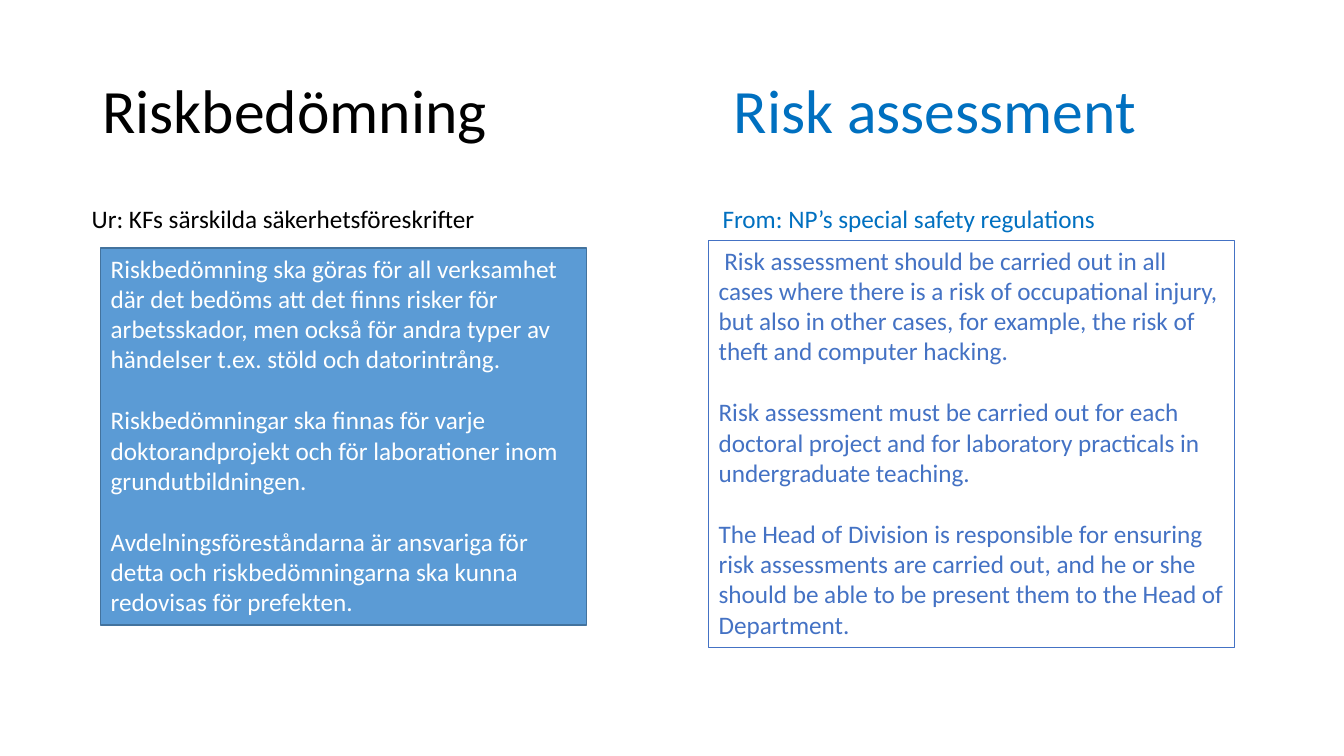
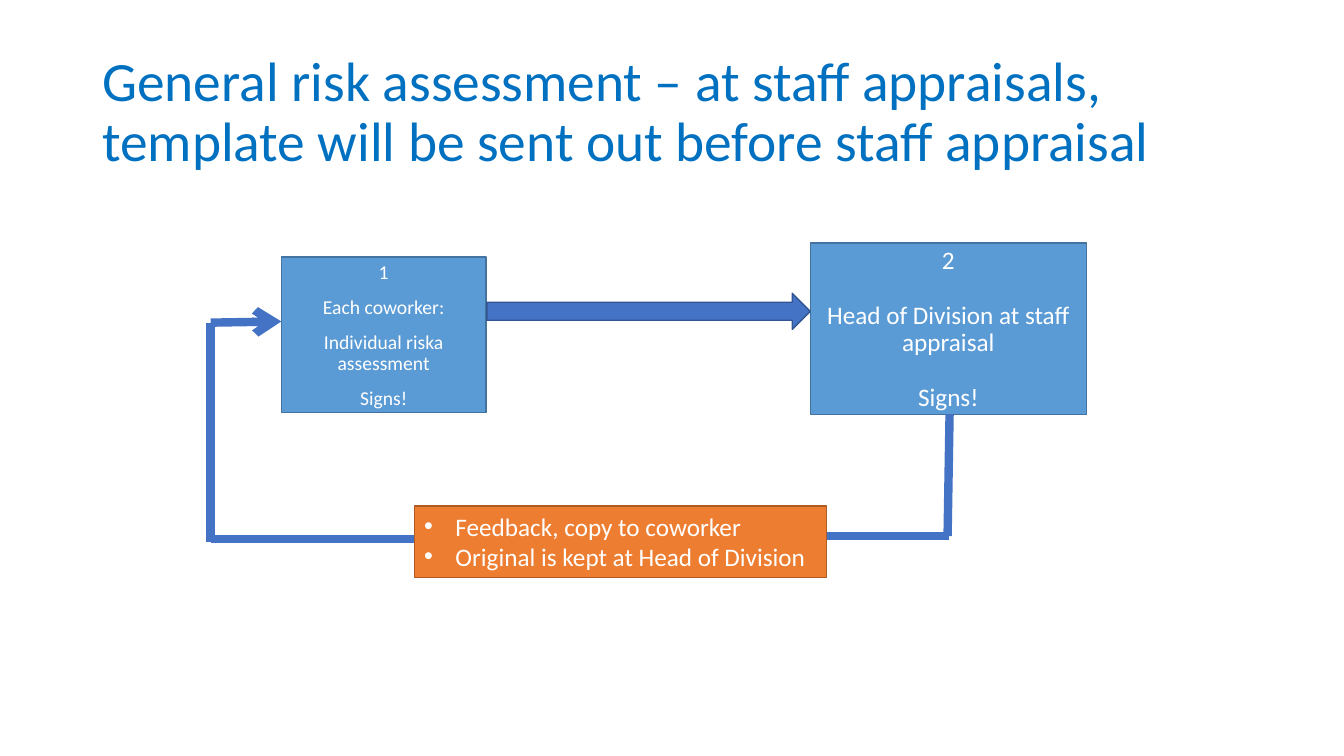
from lxml import etree
from pptx import Presentation
from pptx.dml.color import RGBColor
from pptx.enum.shapes import MSO_CONNECTOR as CONN, MSO_SHAPE as SHAPE
from pptx.enum.text import MSO_ANCHOR as ANCHOR, PP_ALIGN as ALIGN
from pptx.oxml.ns import qn
from pptx.util import Cm, Pt

FONT = "Calibri"
BLACK, WHITE = "000000", "FFFFFF"
TITLE_BLUE, LINE_BLUE, BOX_BLUE, BOX_EDGE = "0070C0", "4472C4", "5B9BD5", "43739E"
ARROW_EDGE, ORANGE, ORANGE_EDGE = "325491", "ED7D31", "AF5C24"
BODY = 18
BLANK_LINE = 22  # points: one line of body text
TITLE_TOP, TITLE_H = 1.02, 3.68
SOURCE_TOP, SOURCE_H = 5.0, 1.02

# Content: one column per language, positions in cm
COLUMNS = [
    dict(
        title="Riskbedömning", title_x=2.33, title_w=29.21, color=BLACK,
        source="Ur: KFs särskilda säkerhetsföreskrifter", source_x=2.06, source_w=10.26,
        box=(2.54, 6.25, 12.24, 9.5),
        box_style=dict(fill=BOX_BLUE, line=BOX_EDGE), text_color=WHITE,
        body=[
            "Riskbedömning ska göras för all verksamhet där det bedöms att det finns "
            "risker för arbetsskador, men också för andra typer av händelser t.ex. "
            "stöld och datorintrång.",
            "Riskbedömningar ska finnas för varje doktorandprojekt och för "
            "laborationer inom grundutbildningen.",
            "Avdelningsföreståndarna är ansvariga för detta och riskbedömningarna "
            "ska kunna redovisas för prefekten.",
        ],
    ),
    dict(
        title="Risk assessment", title_x=18.24, title_w=10.77, color=TITLE_BLUE,
        source="From: NP’s special safety regulations", source_x=17.96, source_w=10.01,
        box=(17.86, 6.05, 13.26, 10.26),
        box_style=dict(line=LINE_BLUE, width=0.5), text_color=LINE_BLUE,
        body=[
            " Risk assessment should be carried out in all cases where there is a "
            "risk of occupational injury, but also in other cases, for example, the "
            "risk of theft and computer hacking.",
            "Risk assessment must be carried out for each doctoral project and for "
            "laboratory practicals in undergraduate teaching.",
            "The Head of Division is responsible for ensuring risk assessments are "
            "carried out, and he or she should be able to be present them to the "
            "Head of Department.",
        ],
    ),
]

PROCESS_TITLE = ("General risk assessment – at staff appraisals, "
                 "template will be sent out before staff appraisal")
# Process steps: position, text size, gap between paragraphs, lines
STEPS = [
    ((20.42, 6.12, 6.96, 4.32), BODY, 0.9 * BLANK_LINE,
     ["2", "Head of Division at staff appraisal", "Signs!"]),
    ((7.09, 6.48, 5.16, 3.91), 14, 10,
     ["1", "Each coworker:", "Individual riska assessment", "Signs!"]),
]
STEP_ARROW = (12.27, 7.39, 8.15, 0.91)
FEEDBACK_BOX = (10.44, 12.75, 10.39, 1.8)
FEEDBACK = ["Feedback, copy to coworker", "Original is kept at Head of Division"]
# Feedback loop: kind, from, to, arrowhead at the end
LOOP = [
    (CONN.ELBOW, (23.93, 13.51), (5.31, 13.59), False),
    (CONN.STRAIGHT, (5.31, 13.67), (5.31, 8.13), False),
    (CONN.STRAIGHT, (5.31, 8.13), (7.09, 8.1), True),
    (CONN.STRAIGHT, (23.88, 13.51), (23.93, 10.44), False),
]


def rgb(color):
    return RGBColor.from_string(color)


def cm(values):
    return [Cm(v) for v in values]


def add_bullet(p, indent=0.79):
    pPr = p._p.get_or_add_pPr()
    pPr.set("marL", str(Cm(indent)))
    pPr.set("indent", str(-Cm(indent)))
    etree.SubElement(pPr, qn("a:buFont")).set("typeface", "Arial")
    etree.SubElement(pPr, qn("a:buChar")).set("char", "•")


def write(sp, lines, size=BODY, color=WHITE, align=ALIGN.LEFT, anchor=ANCHOR.TOP,
          spacing=1.0, gap=0, wrap=True, bullets=False):
    tf = sp.text_frame
    tf.word_wrap = wrap
    tf.vertical_anchor = anchor
    for i, line in enumerate(lines):
        p = tf.add_paragraph() if i else tf.paragraphs[0]
        p.alignment, p.line_spacing = align, spacing
        p.space_before = Pt(gap if i else 0)
        if bullets:
            add_bullet(p)
        r = p.add_run()
        r.text = line
        r.font.name, r.font.size = FONT, Pt(size)
        r.font.color.rgb = rgb(color)


def add_text(s, box, text, **style):
    write(s.shapes.add_textbox(*cm(box)), [text], **style)


def add_title(s, text, x=2.33, w=29.21, size=44, color=TITLE_BLUE):
    add_text(s, (x, TITLE_TOP, w, TITLE_H), text, size=size, color=color,
             anchor=ANCHOR.MIDDLE, spacing=0.9)


def add_box(s, box, line, fill=None, width=1, kind=SHAPE.RECTANGLE):
    sp = s.shapes.add_shape(kind, *cm(box))
    sp.shadow.inherit = False
    if fill:
        sp.fill.solid()
        sp.fill.fore_color.rgb = rgb(fill)
    else:
        sp.fill.background()
    sp.line.color.rgb = rgb(line)
    sp.line.width = Pt(width)
    return sp


def add_line(s, kind, start, end, head):
    c = s.shapes.add_connector(kind, *cm(start + end))
    c.line.color.rgb = rgb(LINE_BLUE)
    c.line.width = Pt(6)
    if head:
        etree.SubElement(c.line._get_or_add_ln(), qn("a:tailEnd")).set("type", "arrow")
    etree.SubElement(c._element.spPr, qn("a:effectLst"))


def build_regulations(s):
    for col in COLUMNS:
        add_title(s, col["title"], col["title_x"], col["title_w"], color=col["color"])
        add_text(s, (col["source_x"], SOURCE_TOP, col["source_w"], SOURCE_H),
                 col["source"], color=col["color"], wrap=False)
        sp = add_box(s, col["box"], **col["box_style"])
        write(sp, col["body"], color=col["text_color"], gap=BLANK_LINE)


def build_process(s):
    add_title(s, PROCESS_TITLE, size=39.6)
    # Steps and the arrow between them
    for box, size, gap, lines in STEPS:
        write(add_box(s, box, BOX_EDGE, BOX_BLUE), lines, size=size, gap=gap,
              align=ALIGN.CENTER, spacing=0.9)
    add_box(s, STEP_ARROW, ARROW_EDGE, LINE_BLUE, kind=SHAPE.RIGHT_ARROW)
    # Feedback loop, with its box on top
    for part in LOOP:
        add_line(s, *part)
    write(add_box(s, FEEDBACK_BOX, ORANGE_EDGE, ORANGE), FEEDBACK,
          wrap=False, bullets=True)


def main():
    prs = Presentation()
    prs.slide_width, prs.slide_height = Cm(33.87), Cm(19.05)
    for build in (build_regulations, build_process):
        build(prs.slides.add_slide(prs.slide_layouts[6]))
    prs.save("out.pptx")


if __name__ == "__main__":
    main()
